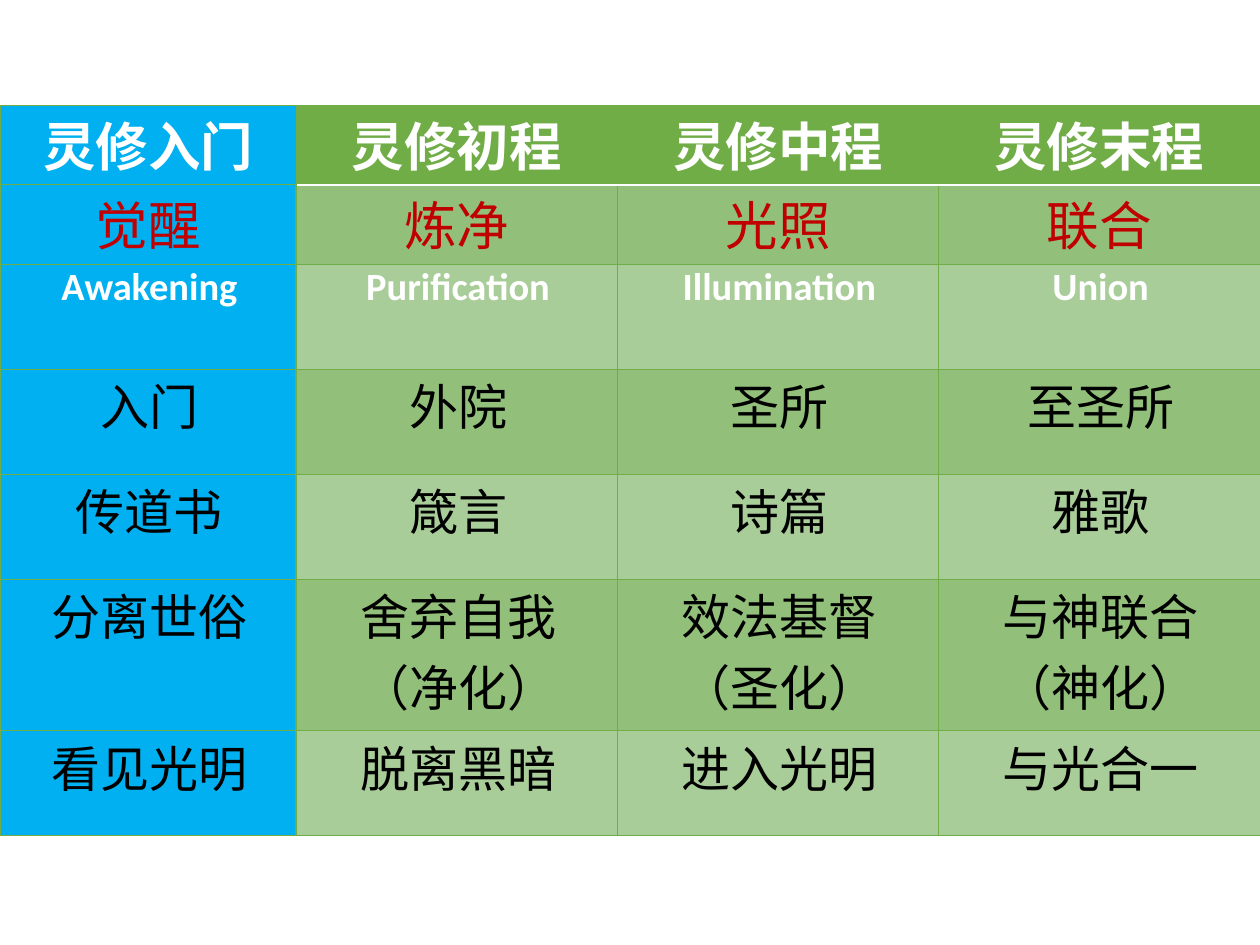
import pptx
import pptx.util
import pptx.dml.color
import pptx.enum.text
import pptx.oxml.ns
import lxml.etree

Pt = pptx.util.Pt
GREEN, BLUE, WHITE, RED, BLACK = "70AD47", "00B0F0", "FFFFFF", "C00000", "000000"
DARK, PALE = "92C07A", "A9CD99"

HEAD = dict(size=30, font="Cabin", ink=WHITE, bold=True, indent=0)
STAGE = dict(HEAD, ink=RED, bold=False)
LATIN = dict(size=22, font="Calibri", ink=WHITE, bold=True, indent=1.5)
BODY = dict(size=28, font="Cabin", ink=BLACK, bold=False, indent=1.5)

# height, style, one text per column
ROWS = [
    (45.4, HEAD, ["灵修入门", "灵修初程", "灵修中程", "灵修末程"]),
    (45.4, STAGE, ["觉醒", "炼净", "光照", "联合"]),
    (60, LATIN, ["Awakening", "Purification", "Illumination", "Union"]),
    (60, BODY, ["入门", "外院", "圣所", "至圣所"]),
    (60, BODY, ["传道书", "箴言", "诗篇", "雅歌"]),
    (86.4, BODY, ["分离世俗", "舍弃自我\n（净化）", "效法基督\n（圣化）", "与神联合\n（神化）"]),
    (60, BODY, ["看见光明", "脱离黑暗", "进入光明", "与光合一"]),
]
COLS = [169.2] + [183.6] * 3
TOP = 60.2


def color(code):
    return pptx.dml.color.RGBColor.from_string(code)


def border(cell, edges):
    """Draw the four edges, given as (side, colour, width) in L, R, T, B order."""
    props = cell._tc.get_or_add_tcPr()
    for spot, (side, code, width) in enumerate(edges):
        line = lxml.etree.Element(pptx.oxml.ns.qn("a:ln" + side), w=str(int(Pt(width))))
        fill = lxml.etree.SubElement(line, pptx.oxml.ns.qn("a:solidFill"))
        lxml.etree.SubElement(fill, pptx.oxml.ns.qn("a:srgbClr"), val=code)
        props.insert(spot, line)


def write(cell, text, style):
    frame = cell.text_frame
    for num, part in enumerate(text.split("\n")):
        para = frame.add_paragraph() if num else frame.paragraphs[0]
        para.alignment = pptx.enum.text.PP_ALIGN.CENTER
        if style["indent"]:
            para._p.get_or_add_pPr().set("marL", str(int(Pt(style["indent"]))))
        run = para.add_run()
        run.text = part
        run.font.size = Pt(style["size"])
        run.font.name = style["font"]
        run.font.bold = style["bold"]
        run.font.color.rgb = color(style["ink"])


def shade(row, col):
    if col == 0:
        return BLUE
    if row == 0:
        return GREEN
    return DARK if row % 2 else PALE


def edges(row, col):
    """Green grid, with a white rule under the green header cells."""
    rule = (WHITE, 1) if col else (GREEN, 0.5)
    return [
        ("L", GREEN, 1 if col == 1 and row else 0.5),
        ("R", GREEN, 1 if col == 0 and row else 0.5),
        ("T", *(rule if row == 1 else (GREEN, 0.5))),
        ("B", *(rule if row == 0 else (GREEN, 0.5))),
    ]


deck = pptx.Presentation()
deck.slide_width, deck.slide_height = Pt(720), Pt(540)
slide = deck.slides.add_slide(deck.slide_layouts[6])
high = sum(row[0] for row in ROWS)
table = slide.shapes.add_table(
    len(ROWS), len(COLS), Pt(0), Pt(TOP), Pt(sum(COLS)), Pt(high)).table

for col, width in enumerate(COLS):
    table.columns[col].width = Pt(width)
for row, (height, style, texts) in enumerate(ROWS):
    table.rows[row].height = Pt(height)
    for col, text in enumerate(texts):
        cell = table.cell(row, col)
        cell.margin_left = cell.margin_right = Pt(5)
        cell.margin_top = cell.margin_bottom = Pt(0)
        cell.fill.solid()
        cell.fill.fore_color.rgb = color(shade(row, col))
        border(cell, edges(row, col))
        write(cell, text, style)

deck.save("out.pptx")
